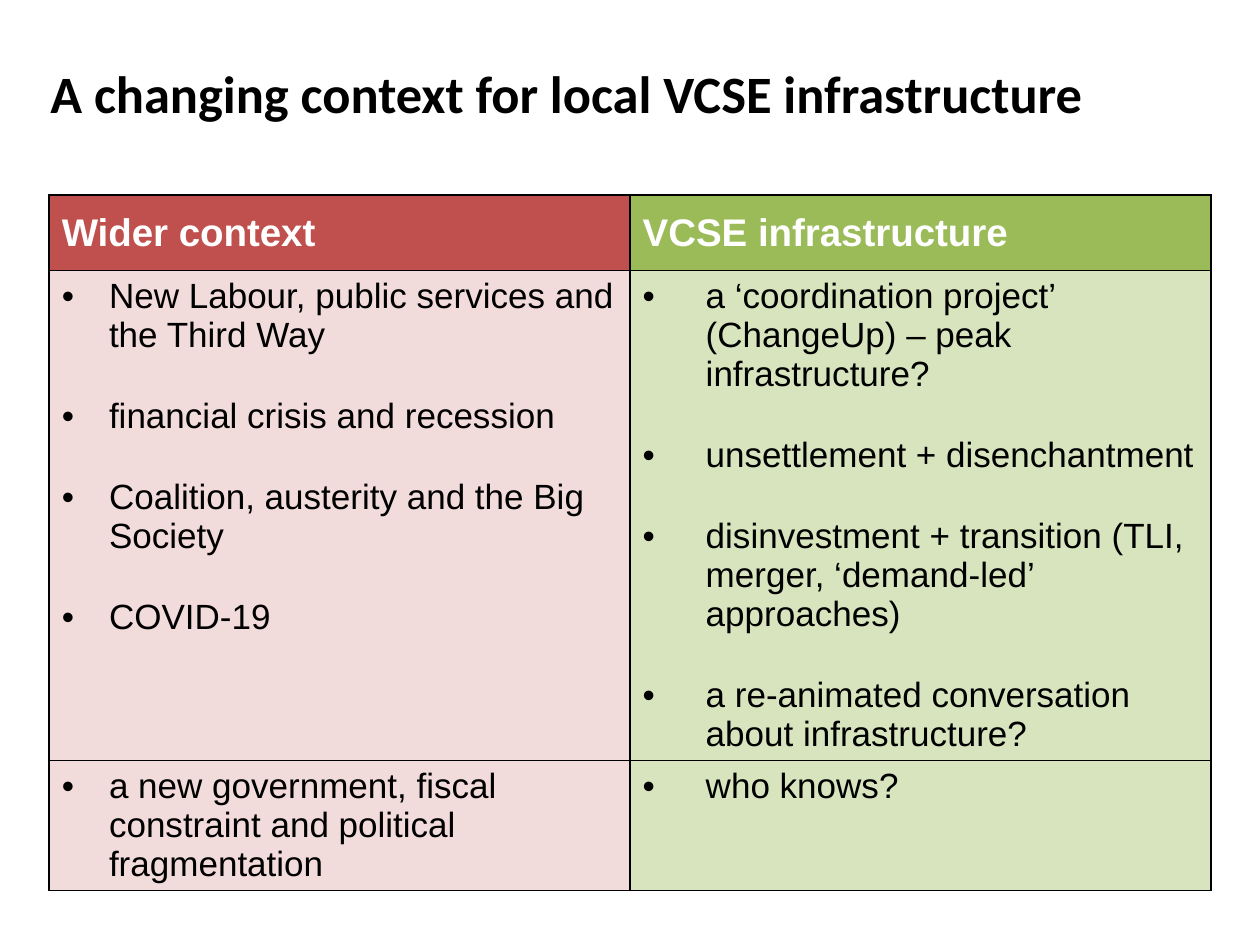
from dataclasses import dataclass

from lxml import etree
from pptx import Presentation
from pptx.dml.color import RGBColor
from pptx.enum.text import MSO_ANCHOR, MSO_AUTO_SIZE, PP_ALIGN
from pptx.oxml.ns import qn
from pptx.util import Pt

LEFT = PP_ALIGN.LEFT
TOP, MIDDLE = MSO_ANCHOR.TOP, MSO_ANCHOR.MIDDLE
TITLE_ONLY = 5


@dataclass(frozen=True)
class Theme:
    title_font: str = "Calibri"
    table_font: str = "Arial"
    title_size: float = 30
    header_size: float = 22
    body_size: float = 20
    bullet_gap: float = 24
    border_width: float = 1
    ink: str = "000000"
    paper: str = "FFFFFF"


@dataclass(frozen=True)
class Column:
    heading: str
    header_fill: str
    body_fill: str
    indent: float
    rows: tuple[tuple[str, ...], ...]


THEME = Theme()
TITLE = "A changing context for local VCSE infrastructure"
TITLE_BOX = {"left": 21.6, "top": 25.2, "width": 648, "height": 55.4}
TABLE_LEFT, TABLE_TOP, COLUMN_WIDTH = 28.1, 111.4, 332
ROW_HEIGHTS = (43.2, 262.8, 72)
COLUMNS = (
    Column("Wider context", "C0504D", "F2DCDB", 27, (
        ("New Labour, public services and the Third Way",
         "financial crisis and recession",
         "Coalition, austerity and the Big Society",
         "COVID-19"),
        ("a new government, fiscal constraint and political fragmentation",),
    )),
    Column("VCSE infrastructure", "9BBB59", "D7E4BD", 36, (
        ("a ‘coordination project’ (ChangeUp) – peak infrastructure?",
         "unsettlement + disenchantment",
         "disinvestment + transition (TLI, merger, ‘demand-led’ approaches)",
         "a re-animated conversation about infrastructure?"),
        ("who knows?",),
    )),
)


def write_span(para, text: str, font: str, size: float, color: str, bold: bool) -> None:
    para.alignment = LEFT
    span = para.add_run()
    span.text = text
    for name, value in {"name": font, "size": Pt(size), "bold": bold}.items():
        setattr(span.font, name, value)
    span.font.color.rgb = RGBColor.from_string(color)


def add_bullet(para, indent: float) -> None:
    properties = para._p.get_or_add_pPr()
    properties.set("marL", str(Pt(indent)))
    properties.set("indent", str(-Pt(indent)))
    etree.SubElement(properties, qn("a:buFont"), typeface=THEME.table_font)
    etree.SubElement(properties, qn("a:buChar"), char="•")


def style_cell(cell, fill: str, anchor) -> None:
    cell.fill.solid()
    cell.fill.fore_color.rgb = RGBColor.from_string(fill)
    cell.vertical_anchor = anchor
    properties = cell._tc.get_or_add_tcPr()
    # Border elements must precede the fill.
    for position, side in enumerate(("lnL", "lnR", "lnT", "lnB")):
        line = etree.Element(qn(f"a:{side}"), w=str(Pt(THEME.border_width)))
        paint = etree.SubElement(line, qn("a:solidFill"))
        etree.SubElement(paint, qn("a:srgbClr"), val=THEME.ink)
        properties.insert(position, line)


def fill_bullets(cell, items: tuple[str, ...], indent: float) -> None:
    frame = cell.text_frame
    for index, item in enumerate(items):
        para = frame.add_paragraph() if index else frame.paragraphs[0]
        if index:
            para.space_before = Pt(THEME.bullet_gap)
        add_bullet(para, indent)
        write_span(para, item, THEME.table_font, THEME.body_size, THEME.ink, False)


def add_title(page) -> None:
    box = page.shapes.title
    for name, value in TITLE_BOX.items():
        setattr(box, name, Pt(value))
    frame = box.text_frame
    for name, value in {"word_wrap": True, "auto_size": MSO_AUTO_SIZE.NONE,
                        "vertical_anchor": MIDDLE}.items():
        setattr(frame, name, value)
    write_span(frame.paragraphs[0], TITLE, THEME.title_font, THEME.title_size,
               THEME.ink, True)


def add_context_table(page) -> None:
    table = page.shapes.add_table(
        len(ROW_HEIGHTS), len(COLUMNS), Pt(TABLE_LEFT), Pt(TABLE_TOP),
        Pt(COLUMN_WIDTH * len(COLUMNS)), Pt(sum(ROW_HEIGHTS))).table
    table.first_row = table.horz_banding = False
    for row, height in zip(table.rows, ROW_HEIGHTS):
        row.height = Pt(height)
    for index, column in enumerate(COLUMNS):
        table.columns[index].width = Pt(COLUMN_WIDTH)
        header = table.cell(0, index)
        style_cell(header, column.header_fill, MIDDLE)
        write_span(header.text_frame.paragraphs[0], column.heading,
                   THEME.table_font, THEME.header_size, THEME.paper, True)
        for row_index, items in enumerate(column.rows, start=1):
            cell = table.cell(row_index, index)
            style_cell(cell, column.body_fill, TOP)
            fill_bullets(cell, items, column.indent)


def main() -> None:
    deck = Presentation()
    deck.slide_width, deck.slide_height = Pt(720), Pt(540)
    page = deck.slides.add_slide(deck.slide_layouts[TITLE_ONLY])
    add_title(page)
    add_context_table(page)
    deck.save("out.pptx")


if __name__ == "__main__":
    main()
